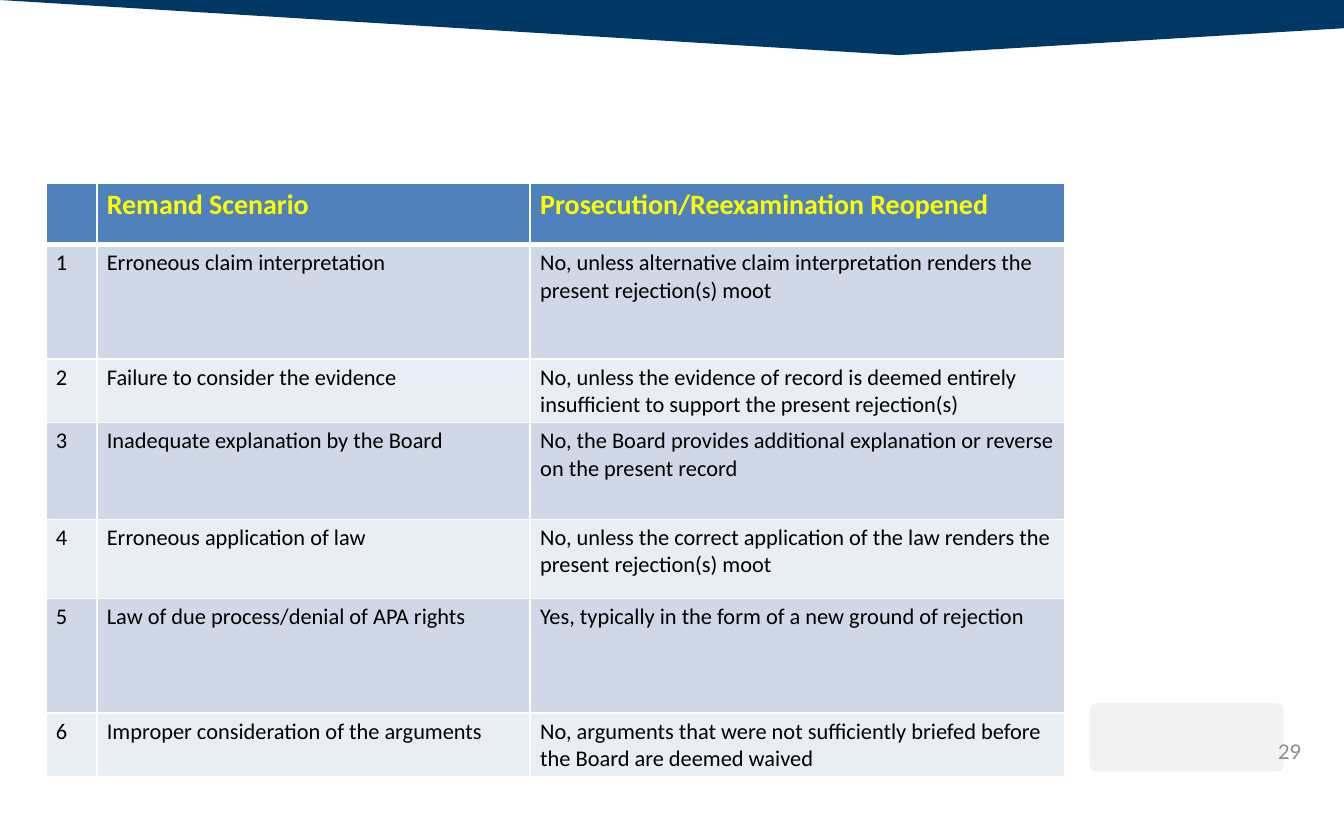
from dataclasses import dataclass

from lxml.etree import SubElement
from pptx import Presentation
from pptx.dml.color import RGBColor
from pptx.enum.shapes import MSO_SHAPE as Preset
from pptx.oxml.ns import qn
from pptx.util import Emu, Inches, Pt

WIDTH, HEIGHT = Inches(10), Inches(6.25)
NAVY, PALE, WHITE = "003865", "F2F2F2", "FFFFFF"
HEADER_FILL, HEADER_TEXT = "4F81BD", "FFFF00"
BANDS = ("D0D8E8", "E9EDF4")
COLUMN_SHARES = (3.8, 32.25, 39.75)


@dataclass(frozen=True)
class Scenario:
    remand: str
    reopened: str
    height: float


@dataclass(frozen=True)
class CellStyle:
    fill: str
    text: str
    size: float
    bold: bool
    bottom_line: float


HEADER_STYLE = CellStyle(HEADER_FILL, HEADER_TEXT, 15, True, 3)
BODY_STYLES = [CellStyle(band, "000000", 12, False, 1) for band in BANDS]
HEADER = Scenario("Remand Scenario", "Prosecution/Reexamination Reopened", 7.36)
SCENARIOS = [
    Scenario("Erroneous claim interpretation",
             "No, unless alternative claim interpretation renders the present rejection(s) moot", 13.6),
    Scenario("Failure to consider the evidence",
             "No, unless the evidence of record is deemed entirely insufficient "
             "to support the present rejection(s)", 7.6),
    Scenario("Inadequate explanation by the Board",
             "No, the Board provides additional explanation or reverse on the present record", 11.52),
    Scenario("Erroneous application of law",
             "No, unless the correct application of the law renders the present rejection(s) moot", 9.44),
    Scenario("Law of due process/denial of APA rights",
             "Yes, typically in the form of a new ground of rejection", 13.6),
    Scenario("Improper consideration of the arguments",
             "No, arguments that were not sufficiently briefed before the Board are deemed waived", 7.6),
]


def across(percent: float) -> Emu:
    return Emu(round(WIDTH * percent / 100))


def down(percent: float) -> Emu:
    return Emu(round(HEIGHT * percent / 100))


def colour(value: str) -> RGBColor:
    return RGBColor.from_string(value)


def paint(shape, fill: str) -> None:
    shape.shadow.inherit = False
    shape.fill.solid()
    shape.fill.fore_color.rgb = colour(fill)
    shape.line.fill.background()


def draw_banner(page) -> None:
    corners = [(0, 0), (66.9, 6.56), (100, 3.36)]
    builder = page.shapes.build_freeform(WIDTH, 0)
    builder.add_line_segments([(across(x), down(y)) for x, y in corners], close=True)
    paint(builder.convert_to_shape(), NAVY)


def draw_emblem(page) -> None:
    emblem = page.shapes.add_shape(
        Preset.ROUNDED_RECTANGLE, across(81.1), down(83.68), across(14.4), down(8.16))
    emblem.adjustments[0] = 0.1
    paint(emblem, PALE)


def draw_page_number(page, number: str) -> None:
    box = page.shapes.add_textbox(across(94), down(88), across(3.9), down(2.88))
    frame = box.text_frame
    frame.word_wrap = True
    frame.margin_left = frame.margin_right = frame.margin_top = frame.margin_bottom = 0
    para = frame.paragraphs[0]
    para.text = number
    para.font.name, para.font.size = "Lato", Pt(10.8)
    para.font.color.rgb = colour("8A8A8A")
    para._p.get_or_add_pPr().set("marL", str(Inches(0.11)))


def set_borders(cell, bottom_line: float) -> None:
    properties = cell._tc.get_or_add_tcPr()
    for side, points in (("L", 1), ("R", 1), ("T", 1), ("B", bottom_line)):
        line = SubElement(properties, qn(f"a:ln{side}"), w=str(Pt(points)))
        SubElement(SubElement(line, qn("a:solidFill")), qn("a:srgbClr"), val=WHITE)


def fill_cell(cell, text: str, style: CellStyle) -> None:
    set_borders(cell, style.bottom_line)
    cell.fill.solid()
    cell.fill.fore_color.rgb = colour(style.fill)
    cell.margin_left = cell.margin_right = Pt(5.4)
    cell.margin_top = cell.margin_bottom = Pt(2.7)
    para = cell.text_frame.paragraphs[0]
    para.text = text
    para.font.name, para.font.size, para.font.bold = "Calibri", Pt(style.size), style.bold
    para.font.color.rgb = colour(style.text)


def draw_scenarios(page) -> None:
    entries = [HEADER, *SCENARIOS]
    table = page.shapes.add_table(
        len(entries), len(COLUMN_SHARES), across(3.4), down(21.76),
        across(sum(COLUMN_SHARES)), down(sum(entry.height for entry in entries))).table
    for column, share in zip(table.columns, COLUMN_SHARES):
        column.width = across(share)
    for index, (row, entry) in enumerate(zip(table.rows, entries)):
        row.height = down(entry.height)
        style = BODY_STYLES[(index - 1) % 2] if index else HEADER_STYLE
        texts = (str(index) if index else "", entry.remand, entry.reopened)
        for cell, text in zip(row.cells, texts):
            fill_cell(cell, text, style)


def main() -> None:
    deck = Presentation()
    deck.slide_width, deck.slide_height = WIDTH, HEIGHT
    page = deck.slides.add_slide(deck.slide_layouts[6])
    draw_banner(page)
    draw_emblem(page)
    draw_page_number(page, "29")
    draw_scenarios(page)
    deck.save("out.pptx")


if __name__ == "__main__":
    main()
